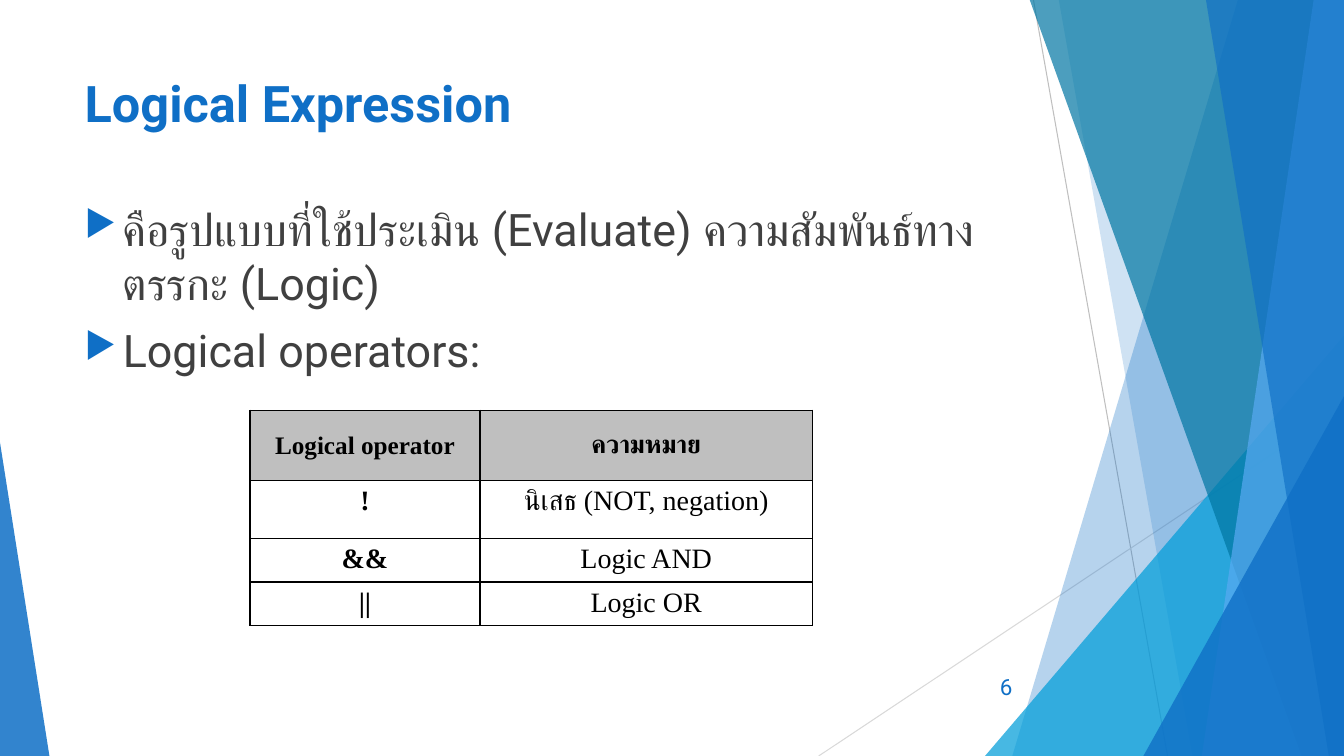
from lxml import etree
from pptx import Presentation
from pptx.dml.color import RGBColor
from pptx.enum.shapes import MSO_CONNECTOR as Connector, MSO_SHAPE as Preset
from pptx.enum.text import MSO_ANCHOR as Anchor, PP_ALIGN as Align
from pptx.oxml.ns import qn
from pptx.util import Inches, Pt

COLORS = {"blue": "0F6FC6", "cyan": "009DD9", "teal": "0076A3", "sky": "59AAF2",
          "gray": "BFBFBF", "pale": "D9D9D9", "text": "404040", "black": "000000"}
WIDTH, HEIGHT = 13.33, 7.5
SANS, SERIF = "Roboto", "Times New Roman"


def color(name):
    """Return the named colour."""
    return RGBColor.from_string(COLORS[name])


def place(shape, left, top, width, height):
    """Move and size a shape, in inches."""
    shape.left, shape.top = Inches(left), Inches(top)
    shape.width, shape.height = Inches(width), Inches(height)


def format_text(para, size, face, shade, bold=False):
    """Format every run of a paragraph."""
    for span in para.runs:
        span.font.size, span.font.name, span.font.bold = Pt(size), face, bold
        span.font.color.rgb = color(shade)


def tint(shape, shade, opacity):
    """Fill a shape with a translucent colour and no outline."""
    shape.shadow.inherit = False
    shape.line.fill.background()
    shape.fill.solid()
    shape.fill.fore_color.rgb = color(shade)
    fill = shape.fill._xPr.find(qn("a:solidFill"))
    etree.SubElement(fill[0], qn("a:alpha"), val=str(opacity * 1000))


def add_line(page, start, end, shade):
    """Draw a thin straight line."""
    line = page.shapes.add_connector(
        Connector.STRAIGHT, *(Inches(value) for value in start + end))
    line.line.color.rgb, line.line.width = color(shade), Pt(0.75)
    etree.SubElement(line._element.spPr, qn("a:effectLst"))


def add_pane(page, top_x, bottom_x, shade, opacity):
    """Draw a slanted pane reaching the right edge of the slide."""
    builder = page.shapes.build_freeform(Inches(top_x), Inches(-0.01))
    corners = [(WIDTH, -0.01), (WIDTH, HEIGHT), (bottom_x, HEIGHT)]
    builder.add_line_segments([(Inches(x), Inches(y)) for x, y in corners], close=True)
    tint(builder.convert_to_shape(), shade, opacity)


def add_wedge(page, left, width, height, adjust, shade, opacity):
    """Draw a triangle standing on the bottom edge of the slide."""
    wedge = page.shapes.add_shape(
        Preset.ISOSCELES_TRIANGLE, Inches(left), Inches(HEIGHT - height),
        Inches(width), Inches(height))
    wedge.adjustments[0] = adjust
    tint(wedge, shade, opacity)


def add_facets(page):
    """Draw the faceted decoration at both sides."""
    add_line(page, (10.25, 0), (11.58, HEIGHT), "gray")
    add_line(page, (WIDTH, 4.03), (8.12, HEIGHT), "pale")
    add_pane(page, 12.28, 10.04, "blue", 30)
    add_pane(page, 10.5, 11.83, "blue", 20)
    add_wedge(page, 9.77, 3.56, 4.17, 1, "cyan", 72)
    add_pane(page, 10.21, 12.91, "teal", 70)
    add_pane(page, 13.03, 11.92, "sky", 70)
    add_pane(page, 11.96, 13.18, "blue", 65)
    add_wedge(page, 11.34, 1.99, 3.57, 1, "blue", 80)
    add_wedge(page, 0, 0.49, 3.11, 0, "blue", 85)


def add_title(page, box, text):
    """Fill the title placeholder."""
    title = page.shapes.title
    place(title, *box)
    title.text_frame.text = text
    title.text_frame.word_wrap = True
    title.text_frame.vertical_anchor = Anchor.TOP
    para = title.text_frame.paragraphs[0]
    para.alignment = Align.LEFT
    format_text(para, 36, SANS, "blue", True)


def add_bullet(para):
    """Give a paragraph a hanging triangle bullet."""
    props = para._p.get_or_add_pPr()
    props.set("marL", str(Inches(0.38)))
    props.set("indent", str(Inches(-0.38)))
    shade = etree.SubElement(props, qn("a:buClr"))
    etree.SubElement(shade, qn("a:srgbClr"), val=COLORS["blue"])
    etree.SubElement(props, qn("a:buSzPct"), val="80000")
    etree.SubElement(props, qn("a:buChar"), char="▶")


def add_body(page, box, lines):
    """Write the bulleted text."""
    frame = page.shapes.add_textbox(*(Inches(value) for value in box)).text_frame
    frame.word_wrap = True
    frame.text = "\n".join(lines)
    for para in frame.paragraphs:
        para.space_before = Pt(10)
        add_bullet(para)
        format_text(para, 32, SANS, "text")


def add_number(page, box, text):
    """Write the slide number."""
    frame = page.shapes.add_textbox(*(Inches(value) for value in box)).text_frame
    frame.word_wrap = True
    frame.vertical_anchor = Anchor.MIDDLE
    frame.text = text
    frame.paragraphs[0].alignment = Align.RIGHT
    format_text(frame.paragraphs[0], 16, SANS, "blue")


def add_borders(cell):
    """Outline a cell; its fill must be set afterwards."""
    props = cell._tc.get_or_add_tcPr()
    for side in ("lnL", "lnR", "lnT", "lnB"):
        line = etree.SubElement(props, qn(f"a:{side}"), w=str(Pt(1)))
        fill = etree.SubElement(line, qn("a:solidFill"))
        etree.SubElement(fill, qn("a:srgbClr"), val=COLORS["black"])


def add_operators(page, box, widths, heights, rows):
    """Build the table of logical operators."""
    table = page.shapes.add_table(
        len(rows), len(widths), *(Inches(value) for value in box)).table
    table.first_row = table.horz_banding = False
    for column, width in zip(table.columns, widths):
        column.width = Inches(width)
    for row, height in zip(table.rows, heights):
        row.height = Inches(height)
    for r, values in enumerate(rows):
        for c, value in enumerate(values):
            cell = table.cell(r, c)
            header = r == 0
            add_borders(cell)
            if header:
                cell.fill.solid()
                cell.fill.fore_color.rgb = color("gray")
                cell.vertical_anchor = Anchor.MIDDLE
            else:
                cell.fill.background()
            cell.text_frame.text = value
            para = cell.text_frame.paragraphs[0]
            para.alignment = Align.CENTER
            format_text(para, 18 if header else 20, SERIF, "black", header or c == 0)


def main():
    """Build and save the deck."""
    deck = Presentation()
    deck.slide_width, deck.slide_height = Inches(WIDTH), Inches(HEIGHT)
    page = deck.slides.add_slide(deck.slide_layouts[5])
    add_facets(page)
    add_title(page, (0.74, 0.67, 9.4, 1.44), "Logical Expression")
    add_body(page, (0.74, 1.95, 9.4, 4.24), [
        "คือรูปแบบที่ใช้ประเมิน (Evaluate) ความสัมพันธ์ทางตรรกะ (Logic)",
        "Logical operators:"])
    add_number(page, (9.39, 6.61, 0.75, 0.4), "6")
    add_operators(page, (2.48, 4.07, 5.58, 2.13), (2.28, 3.3), (0.7, 0.57, 0.43, 0.43), [
        ("Logical operator", "ความหมาย"),
        ("!", "นิเสธ (NOT, negation)"),
        ("&&", "Logic AND"),
        ("||", "Logic OR")])
    deck.save("out.pptx")


if __name__ == "__main__":
    main()
